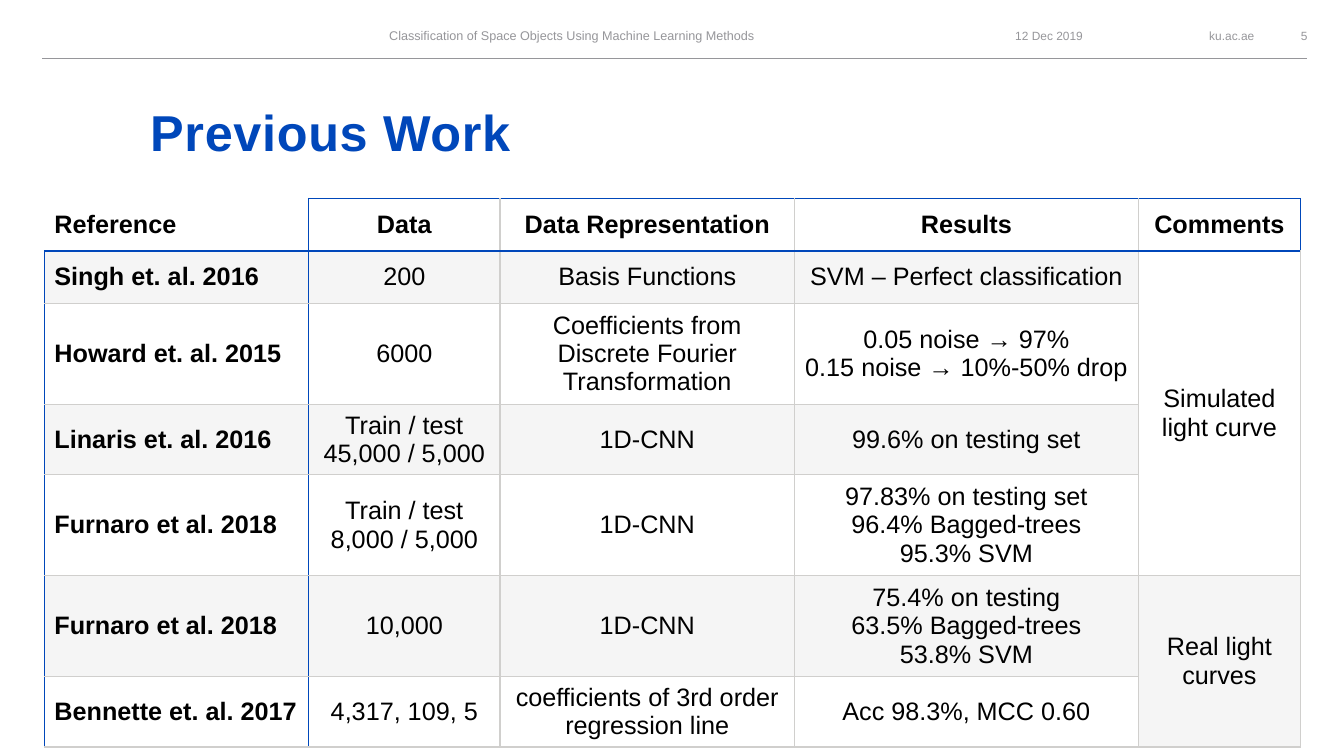
from dataclasses import dataclass

from lxml.etree import SubElement
from pptx import Presentation
from pptx.dml.color import RGBColor
from pptx.enum.shapes import MSO_CONNECTOR
from pptx.enum.text import MSO_ANCHOR as Anchor, PP_ALIGN as Align
from pptx.oxml.ns import qn
from pptx.slide import Slide
from pptx.table import Table, _Cell as Cell
from pptx.text.text import TextFrame
from pptx.util import Emu, Pt

PX = 9144  # 100 px to the inch
FONT = "Arial"
COLOURS = {"blue": "0047BA", "grey": "D0CFCD", "muted": "96969A",
           "black": "000000", "white": "FFFFFF"}


@dataclass(frozen=True)
class Label:
    text: str
    left: int
    top: int
    width: int
    height: int
    size: float
    align: Align
    colour: str = "muted"
    bold: bool = False
    anchor: Anchor = Anchor.MIDDLE
    tracking: int = 0


@dataclass(frozen=True)
class Work:
    reference: str
    data: str
    representation: str
    results: str
    comments: str = ""

    def columns(self) -> tuple[str, ...]:
        return (self.reference, self.data, self.representation,
                self.results, self.comments)


LABELS = [
    Label("ku.ac.ae", 1139, 22, 105, 27, 8.5, Align.RIGHT),
    Label("12 Dec 2019", 884, 22, 190, 27, 8.5, Align.RIGHT),
    Label("Classification of Space Objects Using Machine Learning Methods",
          314, 22, 506, 27, 9, Align.CENTER),
    Label("5", 1265, 22, 57, 27, 8.5, Align.CENTER),
    Label("Previous Work", 149, 59, 1093, 101, 36, Align.LEFT,
          "blue", True, Anchor.BOTTOM, 50),
]
WORKS = [
    Work("Reference", "Data", "Data Representation", "Results", "Comments"),
    Work("Singh et. al. 2016", "200", "Basis Functions",
         "SVM – Perfect classification", "Simulated light curve"),
    Work("Howard et. al. 2015", "6000",
         "Coefficients from Discrete Fourier Transformation",
         "0.05 noise → 97%\n0.15 noise → 10%-50% drop"),
    Work("Linaris et. al. 2016", "Train / test\n45,000 / 5,000", "1D-CNN",
         "99.6% on testing set"),
    Work("Furnaro et al. 2018", "Train / test\n8,000 / 5,000", "1D-CNN",
         "97.83% on testing set\n96.4% Bagged-trees\n95.3% SVM"),
    Work("Furnaro et al. 2018", "10,000", "1D-CNN",
         "75.4% on testing\n63.5% Bagged-trees\n53.8% SVM", "Real light curves"),
    Work("Bennette et. al. 2017", "4,317, 109, 5",
         "coefficients of 3rd order regression line", "Acc 98.3%, MCC 0.60"),
]
COLUMN_WIDTHS = [262, 190, 292, 341, 161]
ROW_HEIGHTS = [52, 52, 98, 69, 98, 98, 69]
COMMENTS = 4
COMMENT_SPANS = [(1, 4), (5, 6)]


def px(length: int) -> Emu:
    return Emu(length * PX)


def rgb(name: str) -> RGBColor:
    return RGBColor.from_string(COLOURS[name])


def write(frame: TextFrame, text: str, size: float, colour: str,
          bold: bool, align: Align, tracking: int = 0) -> None:
    """Write each line of the text as one paragraph with one run."""
    for index, line in enumerate(text.split("\n")):
        paragraph = frame.add_paragraph() if index else frame.paragraphs[0]
        paragraph.alignment = align
        run = paragraph.add_run()
        run.text = line
        run.font.name = FONT
        run.font.size = Pt(size)
        run.font.bold = bold
        run.font.color.rgb = rgb(colour)
        if tracking:
            run.font._element.set("spc", str(tracking))


def add_label(slide: Slide, label: Label) -> None:
    box = slide.shapes.add_textbox(px(label.left), px(label.top),
                                   px(label.width), px(label.height))
    frame = box.text_frame
    frame.word_wrap = True
    frame.vertical_anchor = label.anchor
    frame.margin_left = frame.margin_right = 0
    frame.margin_top = frame.margin_bottom = 0
    write(frame, label.text, label.size, label.colour, label.bold,
          label.align, label.tracking)


def add_header_rule(slide: Slide) -> None:
    rule = slide.shapes.add_connector(MSO_CONNECTOR.STRAIGHT,
                                      px(42), px(58), px(1296), px(58))
    rule.line.color.rgb = rgb("muted")
    rule.line.width = Pt(0.75)
    SubElement(rule._element.spPr, qn("a:effectLst"))


def border_colours(row: int, column: int) -> dict[str, str | None]:
    """Blue frames the headings and the references; the corner stays open."""
    header, reference = row == 0, column == 0
    corner = header and reference
    last_heading = header and column == COMMENTS
    return {
        "L": None if corner else "blue" if column <= 1 else "grey",
        "R": "blue" if reference or last_heading else "grey",
        "T": None if corner else "blue" if row <= 1 else "grey",
        "B": "blue" if header else "grey",
    }


def draw_borders(cell: Cell, colours: dict[str, str | None]) -> None:
    properties = cell._tc.get_or_add_tcPr()
    for side, colour in colours.items():
        line = SubElement(properties, qn(f"a:ln{side}"), w=str(Pt(1)))
        if colour is None:
            SubElement(line, qn("a:noFill"))
        else:
            fill = SubElement(line, qn("a:solidFill"))
            SubElement(fill, qn("a:srgbClr"), val=COLOURS[colour])


def fill_cell(cell: Cell, row: int, column: int) -> None:
    """Tint odd rows, and the second group in the comments column."""
    second_group = COMMENT_SPANS[1][0]
    tinted = row >= second_group if column == COMMENTS else row % 2 == 1
    if not tinted:
        cell.fill.background()
        return
    cell.fill.solid()
    cell.fill.fore_color.rgb = rgb("grey")
    tint = cell._tc.tcPr.find(qn("a:solidFill")).find(qn("a:srgbClr"))
    SubElement(tint, qn("a:alpha"), val="20000")


def add_works_table(slide: Slide) -> Table:
    frame = slide.shapes.add_table(len(WORKS), len(COLUMN_WIDTHS), px(44), px(197),
                                   px(sum(COLUMN_WIDTHS)), px(sum(ROW_HEIGHTS)))
    table = frame.table
    table.first_row = table.horz_banding = False
    for column, width in zip(table.columns, COLUMN_WIDTHS):
        column.width = px(width)
    for row, height in zip(table.rows, ROW_HEIGHTS):
        row.height = px(height)
    for first, last in COMMENT_SPANS:
        table.cell(first, COMMENTS).merge(table.cell(last, COMMENTS))
    for row, work in enumerate(WORKS):
        for column, text in enumerate(work.columns()):
            cell = table.cell(row, column)
            draw_borders(cell, border_colours(row, column))
            fill_cell(cell, row, column)
            cell.vertical_anchor = Anchor.MIDDLE
            if text:
                write(cell.text_frame, text, 18, "black", row == 0 or column == 0,
                      Align.CENTER if column else Align.LEFT)
    return table


def main() -> None:
    deck = Presentation()
    deck.slide_width, deck.slide_height = px(1333), px(750)
    slide = deck.slides.add_slide(deck.slide_layouts[6])
    slide.background.fill.solid()
    slide.background.fill.fore_color.rgb = rgb("white")
    add_header_rule(slide)
    for label in LABELS:
        add_label(slide, label)
    add_works_table(slide)
    deck.save("out.pptx")


if __name__ == "__main__":
    main()
